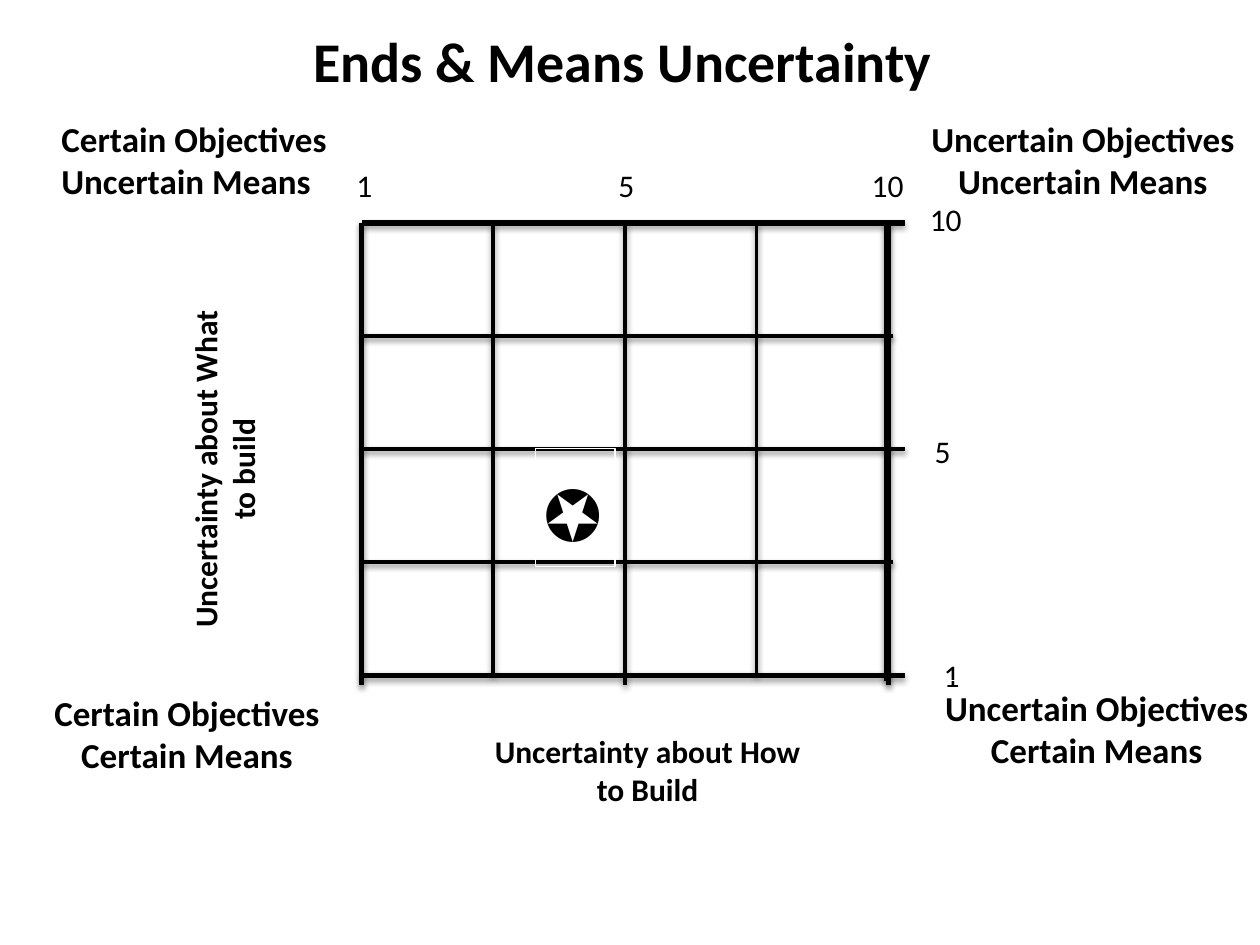
from dataclasses import dataclass

import pptx
import pptx.dml.color
import pptx.enum.shapes
import pptx.enum.text
import pptx.oxml
import pptx.util
from lxml import etree

Pt = pptx.util.Pt
ALIGN = pptx.enum.text.PP_ALIGN
ANCHOR = pptx.enum.text.MSO_ANCHOR
A = "http://schemas.openxmlformats.org/drawingml/2006/main"
LINE_SHADOW = (
    f'<a:effectLst xmlns:a="{A}">'
    '<a:outerShdw blurRad="40000" dist="20000" dir="5400000" rotWithShape="0">'
    '<a:srgbClr val="000000"><a:alpha val="38000"/></a:srgbClr>'
    "</a:outerShdw></a:effectLst>"
)


@dataclass(frozen=True)
class Theme:
    ink: pptx.dml.color.RGBColor = pptx.dml.color.RGBColor(0, 0, 0)
    frame: pptx.dml.color.RGBColor = pptx.dml.color.RGBColor(255, 255, 255)
    font: str = "Calibri"
    symbol_font: str = "Arial"
    title: int = 32
    corner: int = 20
    label: int = 18
    marker: int = 40
    edge: float = 3
    row_rule: float = 2.25
    column_rule: float = 2
    frame_rule: float = 0.75


THEME = Theme()


def add_text(slide, box, text, size, bold=False, align=ALIGN.LEFT, anchor=ANCHOR.TOP,
             wrap=False, framed=False, rotation=0, font=THEME.font):
    """Place text in box (left, top, width, height); framed gives it a thin white outline."""
    label = slide.shapes.add_textbox(*map(Pt, box))
    label.rotation = rotation
    if framed:
        label.line.color.rgb = THEME.frame
        label.line.width = Pt(THEME.frame_rule)
    frame = label.text_frame
    frame.word_wrap = wrap
    frame.vertical_anchor = anchor
    frame.text = text
    for paragraph in frame.paragraphs:
        paragraph.alignment = align
        paragraph.font.name = font
        paragraph.font.size = Pt(size)
        paragraph.font.bold = bold
        paragraph.font.color.rgb = THEME.ink


def add_rule(slide, start, end, weight):
    rule = slide.shapes.add_connector(
        pptx.enum.shapes.MSO_CONNECTOR.STRAIGHT, *map(Pt, (*start, *end)))
    rule.line.color.rgb = THEME.ink
    rule.line.width = Pt(weight)
    rule._element.spPr.append(etree.fromstring(LINE_SHADOW))


def draw_grid(slide, box, cells=4):
    """Draw a square-count grid whose outer and middle rules overhang as ticks."""
    left, top, width, height = box
    right, bottom = left + width, top + height
    for i in range(cells + 1):
        is_edge = i in (0, cells)
        is_tick = is_edge or i == cells // 2
        y = top + height * i / cells
        add_rule(slide, (right + (9.4 if is_tick else 2.9), y), (left, y),
                 THEME.edge if is_edge else THEME.row_rule)
        x = left + width * i / cells
        add_rule(slide, (x, bottom + (5.8 if is_tick else 0)), (x, top),
                 THEME.edge if is_edge else THEME.column_rule)
    inner_edge = right - 1.5
    add_rule(slide, (inner_edge, bottom + 3), (inner_edge, top), THEME.column_rule)


def label_scales(slide, box):
    """Number the top side 1 to 10 rightwards and the right side 1 to 10 upwards."""
    left, top, width, height = box
    for value, x, label_width in (("1", -10, 24), ("5", 139.7, 24), ("10", 284.4, 33)):
        add_text(slide, (left + x, top - 36, label_width, 29), value, THEME.label)
    for value, x, y, label_width in (("10", 16.6, -16.5, 35), ("5", 19.4, 116, 24),
                                     ("1", 24.5, 244.1, 24)):
        add_text(slide, (left + width + x, top + y, label_width, 29), value, THEME.label)


def label_corners(slide, box):
    """Name the four extremes around the grid."""
    left, top, width, height = box
    right, bottom = left + width, top + height
    corners = (
        ("Certain Objectives\nUncertain Means", left - 178.6, top - 64, 167.8,
         ALIGN.LEFT, False),
        ("Uncertain Objectives\nUncertain Means", right + 16.5, top - 64, 189.4,
         ALIGN.CENTER, False),
        ("Certain Objectives\nCertain Means", left - 183.6, bottom + 5.8, 167.8,
         ALIGN.CENTER, False),
        ("Uncertain Objectives\nCertain Means", right + 24.4, bottom + 2.9, 189.4,
         ALIGN.CENTER, True),
    )
    for text, x, y, label_width, align, framed in corners:
        add_text(slide, (x, y, label_width, 55.4), text, THEME.corner, bold=True,
                 align=align, anchor=ANCHOR.MIDDLE, framed=framed)


def label_axes(slide, box):
    left, top, width, height = box
    add_text(slide, (left - 174.9, top + 108, 207.4, 65.5), "Uncertainty about What to build",
             THEME.label, bold=True, align=ALIGN.CENTER, wrap=True, rotation=270)
    add_text(slide, (left + 62.7, top + height + 28.8, 201.6, 65.5),
             "Uncertainty about How to Build",
             THEME.label, bold=True, align=ALIGN.CENTER, wrap=True, framed=True)


def mark_position(slide, box):
    """Put the upside-down star in the second column, third row."""
    left, top, width, height = box
    add_text(slide, (left + 99.4, top + 129, 45.4, 67.5), "✪", THEME.marker,
             wrap=True, framed=True, rotation=180, font=THEME.symbol_font)


def build_uncertainty_slide(presentation):
    slide = presentation.slides.add_slide(presentation.slide_layouts[6])
    grid = (206.6, 127.4, 301, 258.5)
    draw_grid(slide, grid)
    mark_position(slide, grid)
    label_scales(slide, grid)
    add_text(slide, (172, 11.5, 372.3, 46), "Ends & Means Uncertainty", THEME.title, bold=True)
    label_corners(slide, grid)
    label_axes(slide, grid)


def main():
    presentation = pptx.Presentation()
    presentation.slide_width, presentation.slide_height = Pt(720), Pt(540)
    build_uncertainty_slide(presentation)
    presentation.save("out.pptx")


if __name__ == "__main__":
    main()
